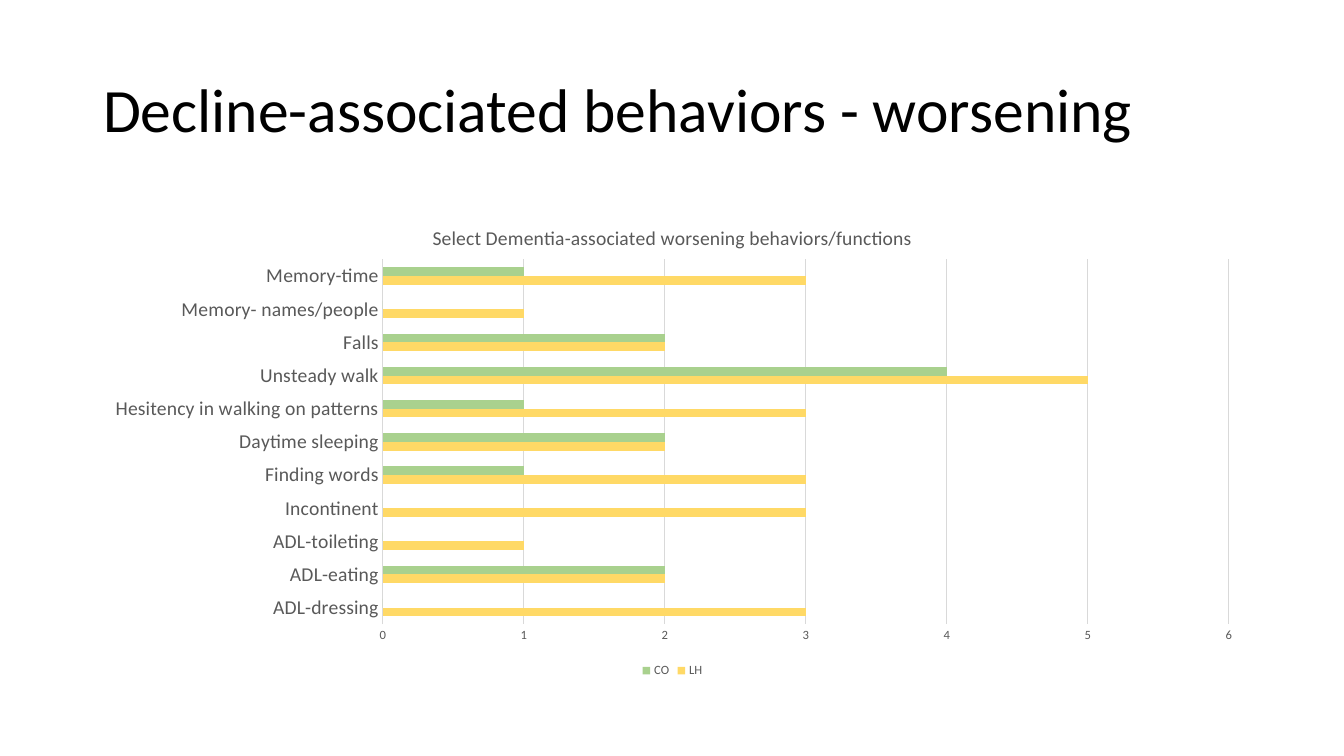
import pptx
import pptx.chart.data
import pptx.dml.color
import pptx.enum.chart
import pptx.enum.text
import pptx.util
import lxml.etree

PX = 914400 / 100.8
FONT = "Calibri"
GREY, RULE = "595959", "D9D9D9"
BEHAVIORS = [
    ("ADL-dressing", 3, 0),
    ("ADL-eating", 2, 2),
    ("ADL-toileting", 1, 0),
    ("Incontinent", 3, 0),
    ("Finding words", 3, 1),
    ("Daytime sleeping", 2, 2),
    ("Hesitency in walking on patterns", 3, 1),
    ("Unsteady walk", 5, 4),
    ("Falls", 2, 2),
    ("Memory- names/people", 1, 0),
    ("Memory-time", 3, 1),
]
SERIES_COLORS = {"LH": "FFD966", "CO": "A9D18E"}


def emu(*lengths):
    """Turn px lengths into EMU."""
    return [pptx.util.Emu(round(n * PX)) for n in lengths]


def rgb(value):
    """Turn a hex string into a colour."""
    return pptx.dml.color.RGBColor.from_string(value)


def style_font(font, size, color):
    """Set family, size and colour of a font."""
    font.name, font.size, font.bold = FONT, pptx.util.Pt(size), False
    font.color.rgb = rgb(color)


def style_line(line):
    """Give a chart line the thin grey rule."""
    line.color.rgb = rgb(RULE)
    line.width = pptx.util.Pt(0.75)


def set_layout(parent, **fractions):
    """Place a chart part at fractions of the chart area."""
    ns = parent.nsmap["c"]
    layout = parent.find(f"{{{ns}}}layout")
    if layout is None:
        layout = lxml.etree.Element(f"{{{ns}}}layout")
        parent.insert(0, layout)
    manual = lxml.etree.SubElement(layout, f"{{{ns}}}manualLayout")
    settings = {"xMode": "edge", "yMode": "edge", **fractions}
    if "w" in fractions:
        settings = {"layoutTarget": "inner", **settings}
    for name, value in settings.items():
        lxml.etree.SubElement(manual, f"{{{ns}}}{name}", val=str(value))


def add_title(s, box, text):
    """Fill the title placeholder in the given box."""
    sp = s.shapes.title
    sp.left, sp.top, sp.width, sp.height = emu(*box)
    tf = sp.text_frame
    tf.text = text
    tf.word_wrap = True
    tf.vertical_anchor = pptx.enum.text.MSO_ANCHOR.MIDDLE
    p = tf.paragraphs[0]
    p.alignment = pptx.enum.text.PP_ALIGN.LEFT
    p.line_spacing = 0.9
    style_font(p.font, 44, "000000")


def style_axes(chart):
    """Format the category and value axes."""
    none = pptx.enum.chart.XL_TICK_MARK.NONE
    for axis, size in ((chart.category_axis, 14), (chart.value_axis, 9)):
        axis.major_tick_mark = axis.minor_tick_mark = none
        style_font(axis.tick_labels.font, size, GREY)
    style_line(chart.category_axis.format.line)
    values = chart.value_axis
    values.minimum_scale, values.maximum_scale, values.major_unit = 0, 6, 1
    values.format.line.fill.background()
    style_line(values.major_gridlines.format.line)


def add_behavior_chart(s, box, title):
    """Add the clustered bar chart of behaviors in the given box."""
    names, *columns = zip(*BEHAVIORS)
    data = pptx.chart.data.CategoryChartData()
    data.categories = names
    for name, values in zip(SERIES_COLORS, columns):
        data.add_series(name, values)
    kind = pptx.enum.chart.XL_CHART_TYPE.BAR_CLUSTERED
    chart = s.shapes.add_chart(kind, *emu(*box), data).chart
    style_font(chart.font, 10, "000000")

    tf = chart.chart_title.text_frame
    tf.text = title
    style_font(tf.paragraphs[0].font, 14, GREY)
    set_layout(chart.chart_title._element, x=0.29, y=0.04)

    plot = chart.plots[0]
    plot.gap_width, plot.overlap, plot.vary_by_categories = 182, 0, False
    for series in plot.series:
        series.format.fill.solid()
        series.format.fill.fore_color.rgb = rgb(SERIES_COLORS[series.name])
    style_axes(chart)
    set_layout(chart._chartSpace.chart.plotArea, x=0.25, y=0.12, w=0.73, h=0.76)

    chart.has_legend = True
    chart.legend.position = pptx.enum.chart.XL_LEGEND_POSITION.BOTTOM
    chart.legend.include_in_layout = False
    style_font(chart.legend.font, 9, GREY)


def main():
    """Build and save the slide."""
    prs = pptx.Presentation()
    prs.slide_width, prs.slide_height = emu(1344, 756)
    s = prs.slides.add_slide(prs.slide_layouts[5])
    add_title(s, (93, 40, 1159, 146), "Decline-associated behaviors - worsening")
    add_behavior_chart(s, (93, 202, 1159, 480),
                       "Select Dementia-associated worsening behaviors/functions")
    prs.save("out.pptx")


if __name__ == "__main__":
    main()
